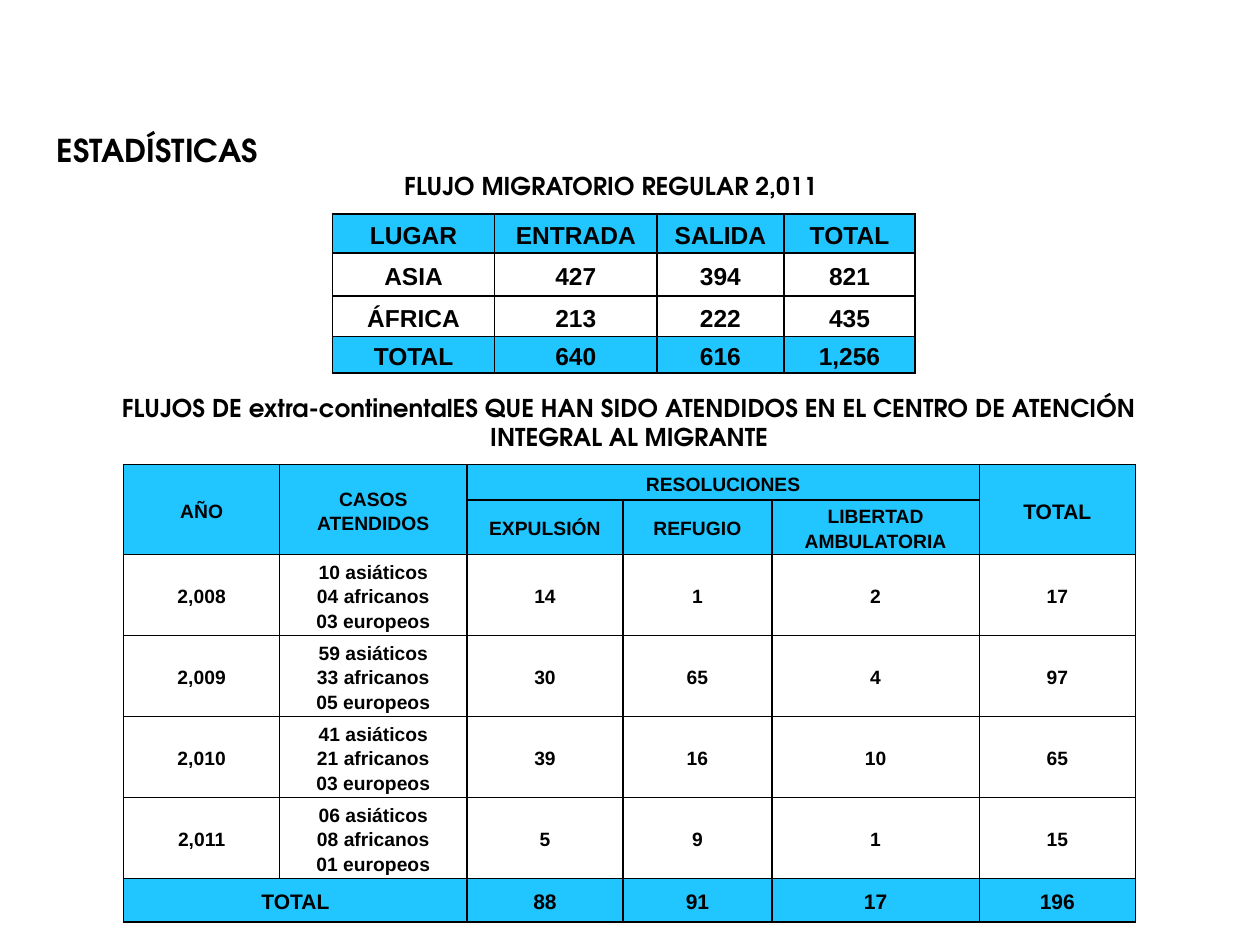
import pptx
import pptx.util
import pptx.dml.color
import pptx.enum.text
import pptx.oxml
import pptx.oxml.ns

Pt = pptx.util.Pt
Align = pptx.enum.text.PP_ALIGN
Anchor = pptx.enum.text.MSO_ANCHOR
AutoSize = pptx.enum.text.MSO_AUTO_SIZE

COLORS = {"text": "000000", "accent": "21C5FF", "border": "000000"}
HEADING_FONT = "TeX Gyre Adventor"
TABLE_FONT = "Arial"

FLOW_ROWS = [
    ["LUGAR", "ENTRADA", "SALIDA", "TOTAL"],
    ["ASIA", "427", "394", "821"],
    ["ÁFRICA", "213", "222", "435"],
    ["TOTAL", "640", "616", "1,256"],
]
CASE_ROWS = [
    ["AÑO", "CASOS ATENDIDOS", "RESOLUCIONES", "", "", "TOTAL"],
    ["", "", "EXPULSIÓN", "REFUGIO", "LIBERTAD AMBULATORIA", ""],
    ["2,008", "10 asiáticos\n04 africanos\n03 europeos", "14", "1", "2", "17"],
    ["2,009", "59 asiáticos\n33 africanos\n05 europeos", "30", "65", "4", "97"],
    ["2,010", "41 asiáticos\n21 africanos\n03 europeos", "39", "16", "10", "65"],
    ["2,011", "06 asiáticos\n08 africanos\n01 europeos", "5", "9", "1", "15"],
    ["TOTAL", "", "88", "91", "17", "196"],
]
CASE_MERGES = [(0, 0, 1, 0), (0, 1, 1, 1), (0, 2, 0, 4), (0, 5, 1, 5), (6, 0, 6, 1)]


class Deck:
    """Build the statistics slide with one shared style."""

    def __init__(self, width, height):
        self.prs = pptx.Presentation()
        self.prs.slide_width, self.prs.slide_height = Pt(width), Pt(height)
        self.s = self.prs.slides.add_slide(self.prs.slide_layouts[5])

    def apply(self, obj, values):
        for name, value in values.items():
            setattr(obj, name, value)

    def format(self, p, font, size, align):
        p.alignment = align
        self.apply(p.font, {"name": font, "size": Pt(size), "bold": True})
        p.font.color.rgb = pptx.dml.color.RGBColor.from_string(COLORS["text"])

    def fill_text(self, sp, box, text, size, align, wrap):
        places = zip(("left", "top", "width", "height"), map(Pt, box))
        self.apply(sp, dict(places))
        tf = sp.text_frame
        tf.text = text
        self.apply(tf, {"word_wrap": wrap, "vertical_anchor": Anchor.TOP,
                        "auto_size": AutoSize.SHAPE_TO_FIT_TEXT})
        self.format(tf.paragraphs[0], HEADING_FONT, size, align)

    def title(self, box, text, size):
        self.fill_text(self.s.shapes.title, box, text, size, Align.LEFT, False)

    def heading(self, box, text, size, align=Align.LEFT, wrap=False):
        sp = self.s.shapes.add_textbox(*map(Pt, box))
        self.fill_text(sp, box, text, size, align, wrap)

    def borders(self, cell):
        tc_pr = cell._tc.get_or_add_tcPr()
        for side in ("lnL", "lnR", "lnT", "lnB"):
            tc_pr.append(pptx.oxml.parse_xml(
                f'<a:{side} {pptx.oxml.ns.nsdecls("a")} w="{Pt(1)}"><a:solidFill>'
                f'<a:srgbClr val="{COLORS["border"]}"/></a:solidFill></a:{side}>'))

    def cell(self, cell, text, size, filled):
        cell.text = text
        self.apply(cell, {"vertical_anchor": Anchor.MIDDLE, "margin_left": Pt(0.7),
                          "margin_top": Pt(0.7), "margin_right": Pt(0.7),
                          "margin_bottom": 0})
        for p in cell.text_frame.paragraphs:
            self.format(p, TABLE_FONT, size, Align.CENTER)
            p.line_spacing = 1.15
        self.borders(cell)
        if filled:
            cell.fill.solid()
            cell.fill.fore_color.rgb = pptx.dml.color.RGBColor.from_string(COLORS["accent"])
        else:
            cell.fill.background()

    def table(self, left, top, widths, heights, rows, size, header_rows=1,
              merges=(), total_size=None):
        frame = self.s.shapes.add_table(len(rows), len(widths), Pt(left), Pt(top),
                                        Pt(sum(widths)), Pt(sum(heights)))
        table = frame.table
        self.apply(table, {"first_row": False, "horz_banding": False})
        for col, width in zip(table.columns, widths):
            col.width = Pt(width)
        for row, height in zip(table.rows, heights):
            row.height = Pt(height)
        last = len(rows) - 1
        for r, row in enumerate(rows):
            for c, text in enumerate(row):
                is_total = r == last or text == "TOTAL"
                self.cell(table.cell(r, c), text,
                          total_size if total_size and is_total else size,
                          r < header_rows or r == last)
        for r1, c1, r2, c2 in merges:
            table.cell(r1, c1).merge(table.cell(r2, c2))


def main():
    deck = Deck(720, 540)
    deck.title((25.2, 71.3, 149, 28.8), "ESTADÍSTICAS", 18)
    deck.heading((223.9, 94.3, 272.9, 24.5), "FLUJO MIGRATORIO REGULAR 2,011", 14)
    deck.table(190, 122.4, [92.7, 92.7, 72.6, 74.9], [22.3, 24.5, 23, 20.9],
               FLOW_ROWS, 14)
    deck.heading((59, 221, 601.2, 41),
                 "FLUJOS DE extra-continentalES QUE HAN SIDO ATENDIDOS EN EL "
                 "CENTRO DE ATENCIÓN INTEGRAL AL MIGRANTE",
                 14, Align.CENTER, True)
    deck.table(70.7, 265.5, [89.1, 107.1, 89.1, 85.1, 118.6, 89.1],
               [20.2, 31] + [46.3] * 4 + [25], CASE_ROWS, 11,
               header_rows=2, merges=CASE_MERGES, total_size=12)
    deck.prs.save("out.pptx")


if __name__ == "__main__":
    main()
